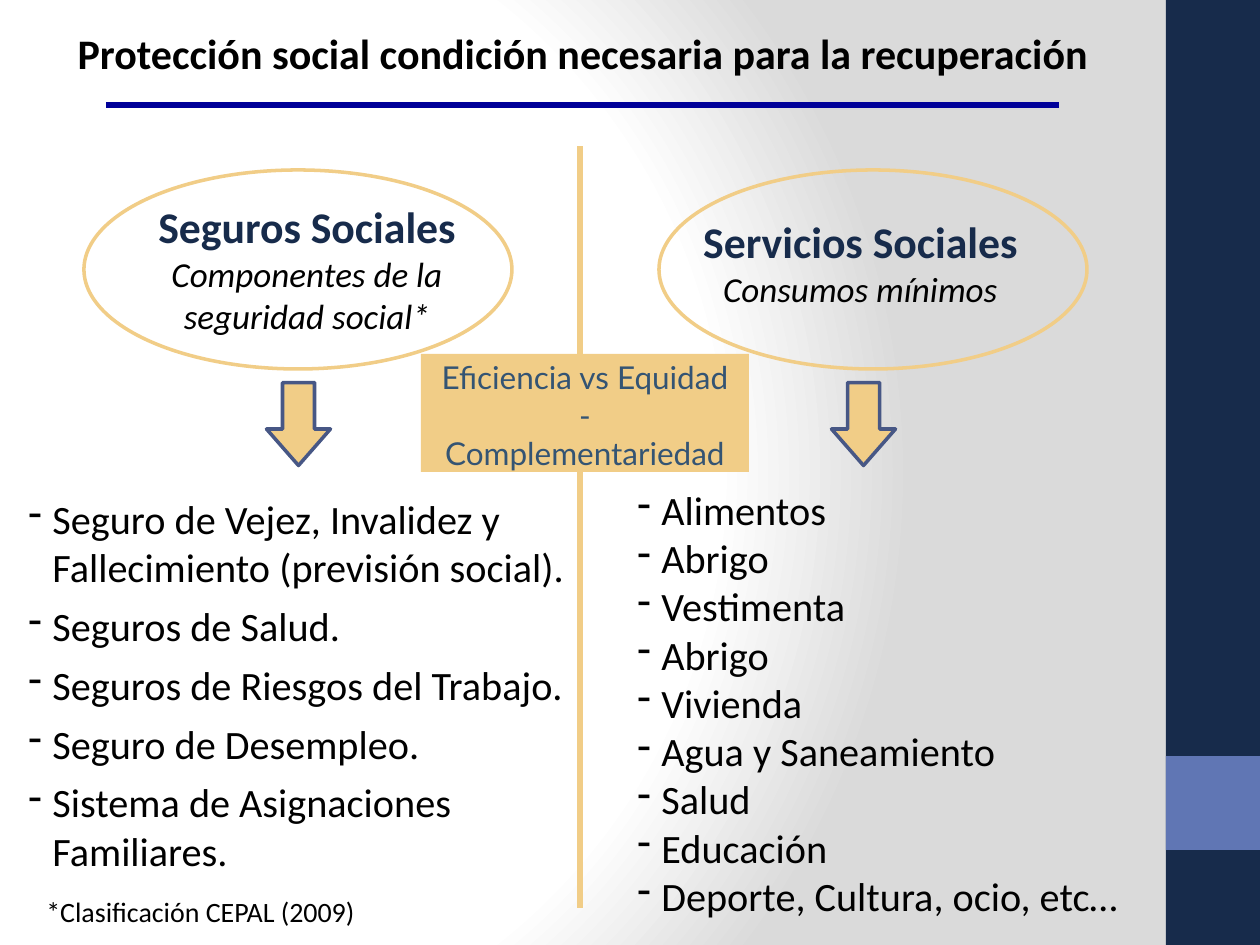
from pptx import Presentation
from pptx.dml.color import RGBColor
from pptx.enum.shapes import MSO_CONNECTOR as Connector, MSO_SHAPE as Shape
from pptx.enum.text import MSO_ANCHOR as Anchor, MSO_AUTO_SIZE as AutoSize, PP_ALIGN as Align
from pptx.oxml import parse_xml
from pptx.oxml.ns import nsdecls
from pptx.util import Pt
from lxml.etree import SubElement

PX = 914400 / 126
DRAWING = "{http://schemas.openxmlformats.org/drawingml/2006/main}"
GOLD, NAVY, BLUE, BLACK = "F1CD87", "172B4B", "6076B4", "000000"
HEADING = {"size": Pt(25), "bold": True, "color": NAVY}
SUBTITLE = {"size": Pt(20), "italic": True}
BODY = {"size": Pt(23)}
INSURANCE = [
    "Seguro de Vejez, Invalidez y Fallecimiento (previsión social).",
    "Seguros de Salud.",
    "Seguros de Riesgos del Trabajo.",
    "Seguro de Desempleo.",
    "Sistema de Asignaciones Familiares.",
]
SERVICES = ["Alimentos", "Abrigo", "Vestimenta", "Abrigo", "Vivienda",
            "Agua y Saneamiento", "Salud", "Educación", "Deporte, Cultura, ocio, etc…"]


def emu(*lengths):
    """Turn px lengths into EMU."""
    return [round(length * PX) for length in lengths]


def rgb(value):
    """Return the colour of a hex string."""
    return RGBColor.from_string(value)


def set_background(page):
    """Give the page a white to grey circular gradient."""
    stops = "".join(
        f'<a:gs pos="{place * 1000}"><a:srgbClr val="{color}"/></a:gs>'
        for place, color in [(0, "FFFFFF"), (75, "FFFFFF"), (100, "DADADA")])
    page._element.cSld.insert(0, parse_xml(
        f'<p:bg {nsdecls("p", "a")}><p:bgPr><a:gradFill rotWithShape="1">'
        f'<a:gsLst>{stops}</a:gsLst><a:path path="circle">'
        '<a:fillToRect l="20000" t="50000" r="100000" b="50000"/></a:path>'
        '</a:gradFill><a:effectLst/></p:bgPr></p:bg>'))


def add_figure(page, kind, box, fill=None, line=None):
    """Add a preset shape with an optional fill and outline."""
    figure = page.shapes.add_shape(kind, *emu(*box))
    figure.shadow.inherit = False
    if fill:
        figure.fill.solid()
        figure.fill.fore_color.rgb = rgb(fill)
    else:
        figure.fill.background()
    if line:
        figure.line.color.rgb = rgb(line)
        figure.line.width = Pt(2)
    else:
        figure.line.fill.background()
    return figure


def add_arrow(page, box):
    """Add a block arrow turned to point down."""
    arrow = add_figure(page, Shape.RIGHT_ARROW, box, GOLD, "475785")
    arrow.rotation = 90
    arrow.adjustments[0], arrow.adjustments[1] = 0.5, 0.57


def add_rule(page, start, end, color):
    """Add a thick straight line."""
    rule = page.shapes.add_connector(Connector.STRAIGHT, *emu(*start, *end))
    rule.line.color.rgb = rgb(color)
    rule.line.width = Pt(3.5)
    SubElement(rule._element.spPr, DRAWING + "effectLst")


def write(frame, lines, align=Align.LEFT, gap=0, bullet=False):
    """Fill a text frame with pairs of text and format."""
    frame.word_wrap = True
    frame.auto_size = AutoSize.NONE
    frame.vertical_anchor = Anchor.TOP
    for index, (text, style) in enumerate(lines):
        para = frame.add_paragraph() if index else frame.paragraphs[0]
        para.alignment = align
        para.space_before = Pt(gap)
        if bullet:
            properties = para._p.get_or_add_pPr()
            indent = emu(24)[0]
            properties.set("marL", str(indent))
            properties.set("indent", str(-indent))
            SubElement(properties, DRAWING + "buChar", char="-")
        span = para.add_run()
        span.text = text
        values = {"name": "Calibri", "color": BLACK, **style}
        span.font.color.rgb = rgb(values.pop("color"))
        for name, value in values.items():
            setattr(span.font, name, value)


def add_text(page, box, lines, **layout):
    """Add a wrapping text box."""
    write(page.shapes.add_textbox(*emu(*box)).text_frame, lines, **layout)


def add_title(page, box, text):
    """Place and format the title placeholder."""
    title = page.shapes.title
    title.left, title.top, title.width, title.height = emu(*box)
    write(title.text_frame, [(text, {"size": Pt(24), "bold": True})], Align.CENTER)


def add_tradeoff(page, box):
    """Add the central label that joins both columns."""
    frame = add_figure(page, Shape.RECTANGLE, box, GOLD).text_frame
    margins = {"margin_left": 0, "margin_top": emu(4)[0], "margin_right": 0, "margin_bottom": 0}
    for name, value in margins.items():
        setattr(frame, name, value)
    style = {"name": "Lato", "size": Pt(18), "color": "345473"}
    lines = ["Eficiencia vs Equidad", "-", "Complementariedad"]
    write(frame, [(line, style) for line in lines], Align.CENTER)


def main():
    """Build and save the slide."""
    deck = Presentation()
    deck.slide_width, deck.slide_height = emu(1260, 945)
    page = deck.slides.add_slide(deck.slide_layouts[5])
    set_background(page)
    add_figure(page, Shape.RECTANGLE, (1166, 0, 94, 945), NAVY)
    add_figure(page, Shape.RECTANGLE, (1166, 756, 94, 94), BLUE)
    add_title(page, (8, 21, 1150, 63), "Protección social condición necesaria para la recuperación")
    add_rule(page, (106, 105), (1059, 105), "000099")
    add_rule(page, (580, 908), (580, 146), GOLD)
    for ellipse_left, arrow_left in [(84, 257), (659, 822)]:
        add_figure(page, Shape.OVAL, (ellipse_left, 170, 428, 199), line=GOLD)
        add_arrow(page, (arrow_left, 392, 83, 64))
    add_text(page, (92, 194, 430, 150), [
        ("Seguros Sociales", HEADING),
        ("Componentes de la seguridad social*", SUBTITLE)], align=Align.CENTER)
    add_text(page, (620, 209, 481, 108), [
        ("Servicios Sociales", HEADING), ("Consumos mínimos", SUBTITLE)], align=Align.CENTER)
    add_text(page, (16, 488, 580, 397), [(item, BODY) for item in INSURANCE], gap=6, bullet=True)
    add_text(page, (625, 479, 580, 451), [(item, BODY) for item in SERVICES], bullet=True)
    add_text(page, (34, 888, 606, 47), [("*Clasificación CEPAL (2009)", {"size": Pt(16)})])
    add_tradeoff(page, (421, 354, 328, 118))
    deck.save("out.pptx")


if __name__ == "__main__":
    main()
